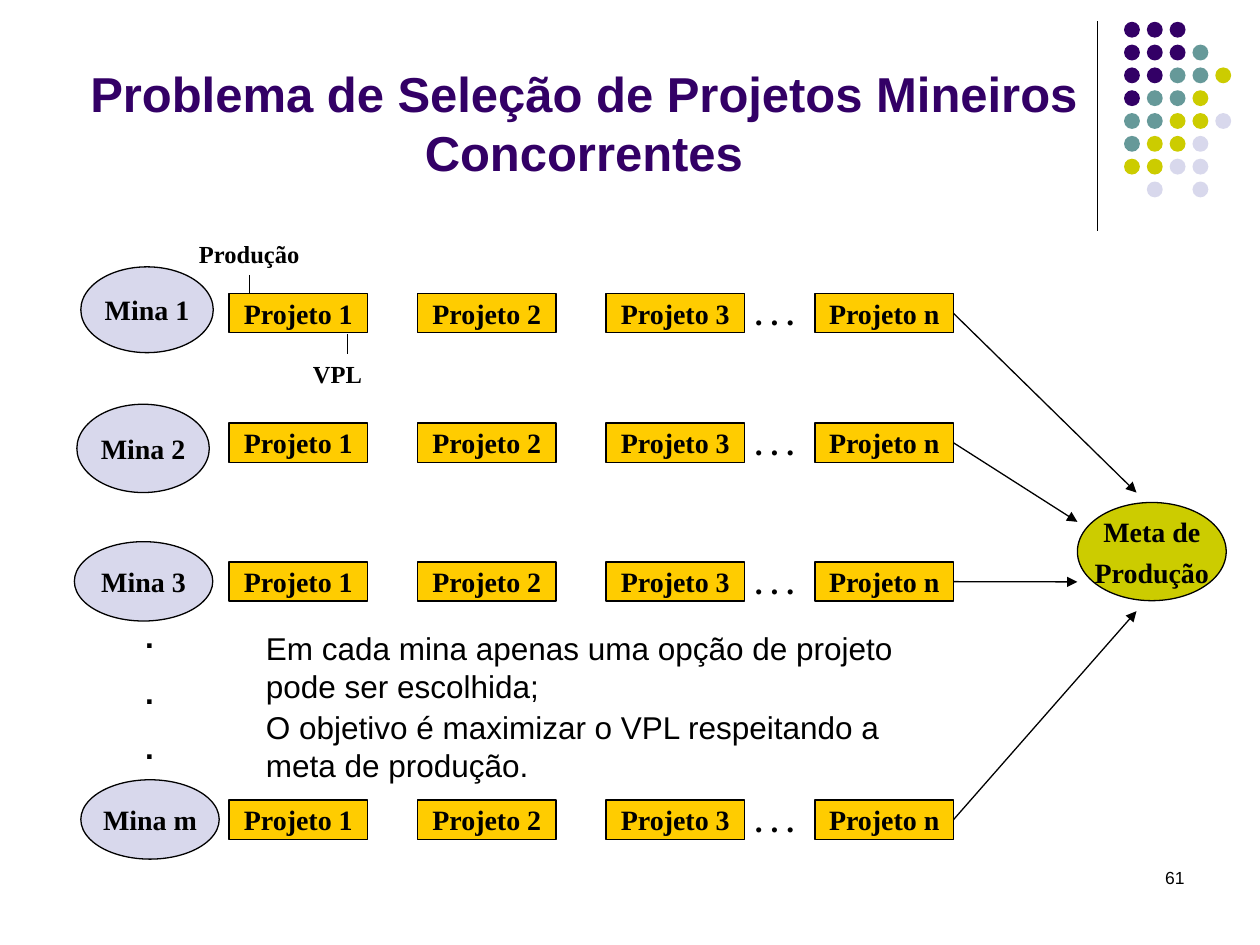
from lxml import etree
from pptx import Presentation
from pptx.dml.color import RGBColor
from pptx.enum.shapes import MSO_CONNECTOR, MSO_SHAPE
from pptx.enum.text import MSO_ANCHOR, PP_ALIGN
from pptx.oxml.ns import qn
from pptx.util import Cm, Pt

STRAIGHT = MSO_CONNECTOR.STRAIGHT
OVAL, RECTANGLE = MSO_SHAPE.OVAL, MSO_SHAPE.RECTANGLE
TOP, MIDDLE = MSO_ANCHOR.TOP, MSO_ANCHOR.MIDDLE
LEFT, CENTER, RIGHT = PP_ALIGN.LEFT, PP_ALIGN.CENTER, PP_ALIGN.RIGHT
SERIF, SANS = "Times New Roman", "Arial"
COLORS = {
    "ink": "000000",
    "purple": "330066",
    "teal": "669999",
    "olive": "CCCC00",
    "lavender": "D8D8EC",
    "gold": "FFCC00",
}

prs = Presentation()
prs.slide_width, prs.slide_height = Cm(25.4), Cm(19.05)
slide = prs.slides.add_slide(prs.slide_layouts[5])


def add_label(text, box, size, font=SERIF, bold=True, align=CENTER, anchor=MIDDLE,
              wrap=False, gap=0, outline=None, fill=None):
    box = [Cm(length) for length in box]
    if outline is None:
        label = slide.shapes.add_textbox(*box)
    else:
        label = slide.shapes.add_shape(outline, *box)
        label.shadow.inherit = False
        label.fill.solid()
        label.fill.fore_color.rgb = RGBColor.from_string(COLORS[fill])
        label.line.color.rgb = RGBColor.from_string(COLORS["ink"])
        label.line.width = Pt(0.75)
    frame = label.text_frame
    frame.word_wrap = wrap
    frame.vertical_anchor = anchor
    frame.text = text
    for index, paragraph in enumerate(frame.paragraphs):
        paragraph.alignment = align
        paragraph.space_before = Pt(gap if index else 0)
        paragraph.font.name = font
        paragraph.font.size = Pt(size)
        paragraph.font.bold = bold
        paragraph.font.color.rgb = RGBColor.from_string(COLORS["ink"])
    return label


def add_line(start, end, arrow=False):
    line = slide.shapes.add_connector(STRAIGHT, *[Cm(length) for length in start + end])
    line.line.color.rgb = RGBColor.from_string(COLORS["ink"])
    line.line.width = Pt(0.75)
    if arrow:
        etree.SubElement(line.line._get_or_add_ln(), qn("a:tailEnd"), type="triangle")
    etree.SubElement(line._element.spPr, qn("a:effectLst"))
    return line


add_line((22.12, 0.43), (22.12, 4.65))
dot_colors = {"P": "purple", "T": "teal", "O": "olive", "L": "lavender"}
dot_rows = ["PPP", "PPPT", "PPTTO", "PTTO", "TTOOL", "TOOL", "OOLL", "-L-L"]
for row, codes in enumerate(dot_rows):
    for column, code in enumerate(codes):
        if code in dot_colors:
            dot = slide.shapes.add_shape(
                OVAL, Cm(22.66 + 0.46 * column), Cm(0.44 + 0.46 * row), Cm(0.32), Cm(0.32))
            dot.shadow.inherit = False
            dot.fill.solid()
            dot.fill.fore_color.rgb = RGBColor.from_string(COLORS[dot_colors[code]])
            dot.line.fill.background()

title = slide.shapes.title
title.left, title.top, title.width, title.height = Cm(1.09), Cm(1.07), Cm(21.36), Cm(2.79)
title.text_frame.text = "Problema de Seleção de Projetos Mineiros Concorrentes"
title.text_frame.vertical_anchor = MIDDLE
heading = title.text_frame.paragraphs[0]
heading.alignment = CENTER
heading.font.name = SANS
heading.font.size = Pt(28)
heading.font.bold = True
heading.font.color.rgb = RGBColor.from_string(COLORS["purple"])

add_label("Meta de\nProdução", (21.72, 10.13, 3, 1.98), 16, gap=4, outline=OVAL, fill="olive")

box_width, box_height = 2.79, 0.79
projects = {"Projeto 1": 4.62, "Projeto 2": 8.42, "Projeto 3": 12.22, "Projeto n": 16.43}
mines = [
    ("Mina 1", (1.63, 5.38, 2.67, 1.73), 5.92, (22.91, 9.93)),
    ("Mina 2", (1.55, 8.15, 2.67, 1.78), 8.53, (21.72, 10.52)),
    ("Mina 3", (1.5, 10.92, 2.79, 1.6), 11.33, (21.72, 11.73)),
    ("Mina m", (1.63, 15.72, 2.79, 1.6), 16.13, (22.91, 12.32)),
]
for mine, mine_box, project_top, arrow_end in mines:
    add_label(mine, mine_box, 16, outline=OVAL, fill="lavender")
    for project, project_left in projects.items():
        last_project = add_label(project, (project_left, project_top, box_width, box_height),
                                 16, outline=RECTANGLE, fill="gold")
    add_label(". . .", (14.22, project_top, box_width, box_height), 18)
    arrow = add_line((19.22, project_top + box_height / 2), arrow_end, arrow=True)
    arrow.begin_connect(last_project, 3)

add_label(".\n.\n.", (2.62, 12.32, 0.79, 3.3), 18, font=SANS, anchor=TOP, wrap=True, gap=10)

add_label("Produção", (3.63, 4.72, box_width, box_height), 14)
add_line((5.03, 5.54), (5.03, 5.92))
add_label("VPL", (5.41, 7.14, box_width, box_height), 14)
add_line((7.01, 6.73), (7.01, 7.14))

notes = [
    ("Em cada mina apenas uma opção de projeto pode ser escolhida;", 12.55, 13.79),
    ("O objetivo é maximizar o VPL respeitando a meta de produção.", 14.15, 14.4),
]
for note, note_top, note_width in notes:
    add_label(note, (5.11, note_top, note_width, 1.78), 18, font=SANS, bold=False,
              align=LEFT, anchor=TOP, wrap=True)

add_label("61", (18.21, 17.35, 5.92, 1.27), 10, font=SANS, bold=False,
          align=RIGHT, anchor=TOP, wrap=True)

prs.save("out.pptx")
